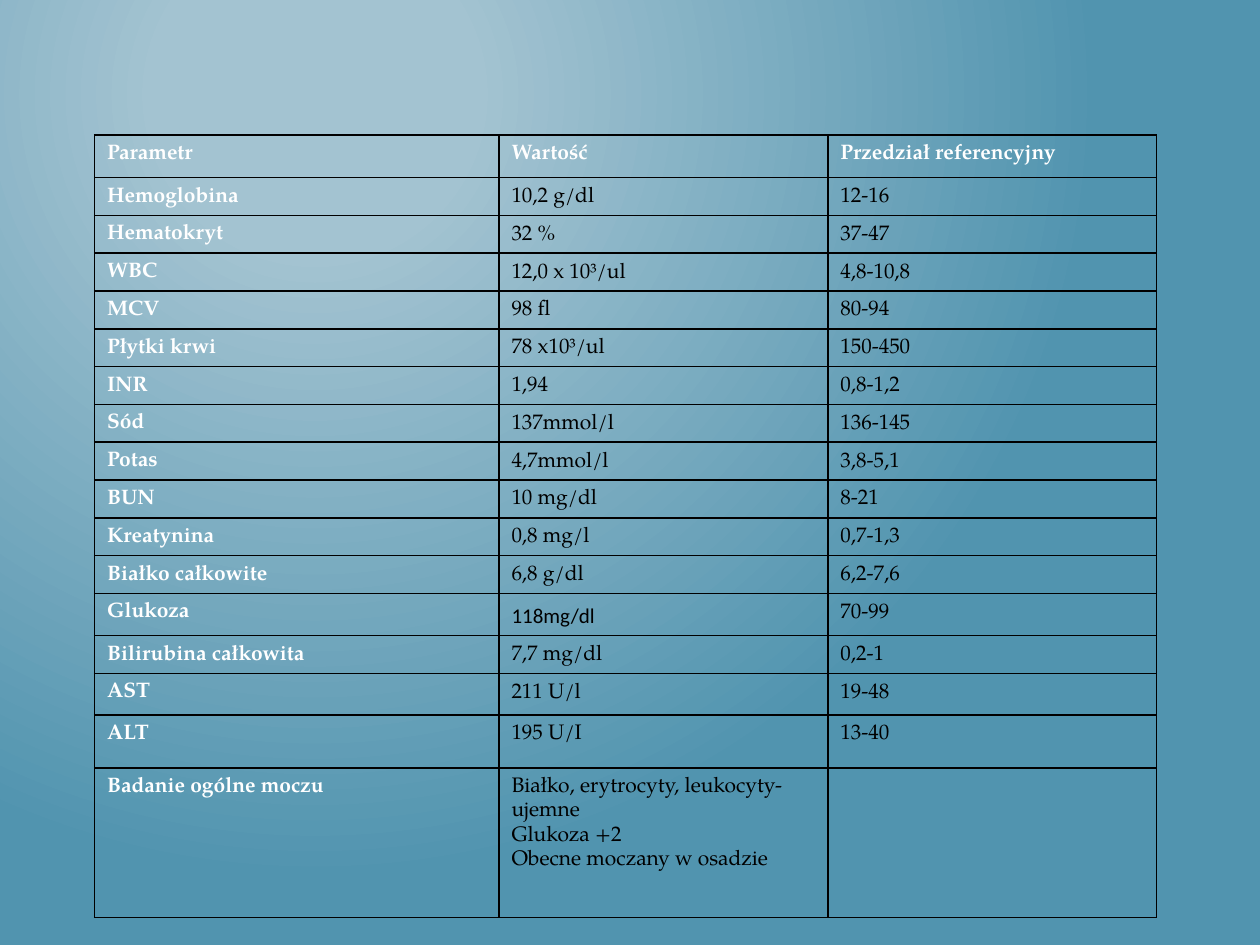
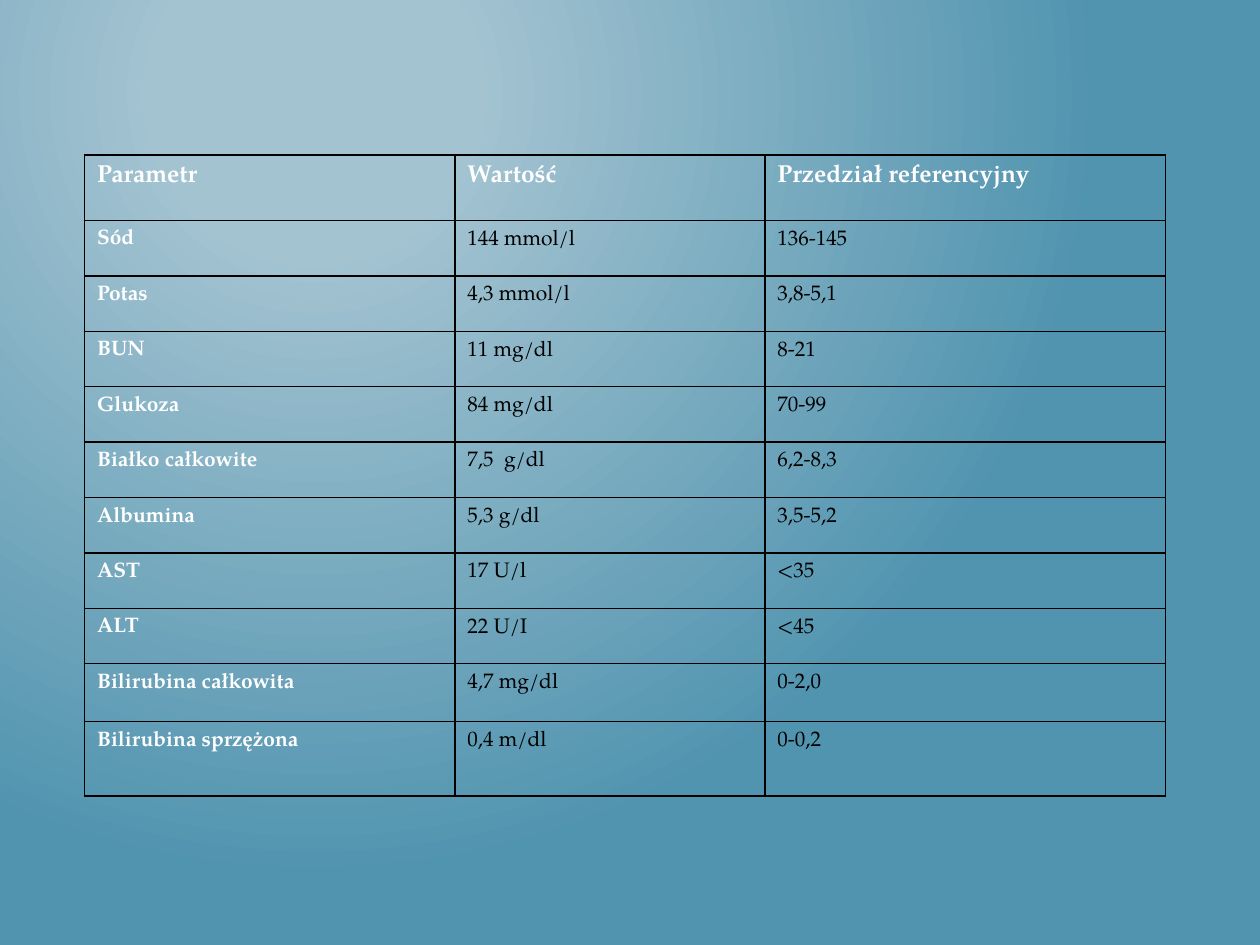
from lxml.etree import SubElement
from pptx import Presentation
from pptx.dml.color import RGBColor
from pptx.oxml.ns import qn
from pptx.util import Inches, Pt

WHITE, BLACK = "FFFFFF", "000000"
GLOW, SEA = "A3C3D1", "5194AF"
SERIF, SANS = "TeX Gyre Pagella", "Calibri"
HEADER = ("Parametr", "Wartość", "Przedział referencyjny")

ADMISSION_RESULTS = [
    ("Hemoglobina", "10,2 g/dl", "12-16"),
    ("Hematokryt", "32 %", "37-47"),
    ("WBC", "12,0 x 10³/ul", "4,8-10,8"),
    ("MCV", "98 fl", "80-94"),
    ("Płytki krwi", "78 x10³/ul", "150-450"),
    ("INR", "1,94", "0,8-1,2"),
    ("Sód", "137mmol/l", "136-145"),
    ("Potas", "4,7mmol/l", "3,8-5,1"),
    ("BUN", "10 mg/dl", "8-21"),
    ("Kreatynina", "0,8 mg/l", "0,7-1,3"),
    ("Białko całkowite", "6,8 g/dl", "6,2-7,6"),
    ("Glukoza", "118mg/dl", "70-99"),
    ("Bilirubina całkowita", "7,7 mg/dl", "0,2-1"),
    ("AST", "211 U/l", "19-48"),
    ("ALT", "195 U/I", "13-40"),
    ("Badanie ogólne moczu",
     "Białko, erytrocyty, leukocyty- ujemne\nGlukoza +2\nObecne moczany w osadzie", ""),
]

FOLLOW_UP_RESULTS = [
    ("Sód", "144 mmol/l", "136-145"),
    ("Potas", "4,3 mmol/l", "3,8-5,1"),
    ("BUN", "11 mg/dl", "8-21"),
    ("Glukoza", "84 mg/dl", "70-99"),
    ("Białko całkowite", "7,5  g/dl", "6,2-8,3"),
    ("Albumina", "5,3 g/dl", "3,5-5,2"),
    ("AST", "17 U/l", "<35"),
    ("ALT", "22 U/I", "<45"),
    ("Bilirubina całkowita", "4,7 mg/dl", "0-2,0"),
    ("Bilirubina sprzężona", "0,4 m/dl", "0-0,2"),
]


def color(value):
    return RGBColor.from_string(value)


def write(frame, text, size=12, font=SERIF, ink=BLACK, bold=False):
    for index, line in enumerate(text.split("\n")):
        para = frame.add_paragraph() if index else frame.paragraphs[0]
        para.line_spacing = 1.15
        span = para.add_run()
        span.text = line
        span.font.size = Pt(size)
        span.font.name = font
        span.font.bold = bold
        span.font.color.rgb = color(ink)


def outline(cell, ink=BLACK, width=1):
    properties = cell._tc.get_or_add_tcPr()
    for side in ("a:lnL", "a:lnR", "a:lnT", "a:lnB"):
        line = SubElement(properties, qn(side), w=str(Pt(width)))
        solid = SubElement(line, qn("a:solidFill"))
        SubElement(solid, qn("a:srgbClr"), val=ink)


class LabDeck:
    def __init__(self):
        self.deck = Presentation()
        self.deck.slide_width = Inches(10)
        self.deck.slide_height = Inches(7.5)
        self.page = None
        self.paint_background()

    def paint_background(self):
        master = self.deck.slide_master
        fill = master.background.fill
        fill.gradient()
        for stop, position, tone in zip(fill.gradient_stops, (0.2, 1), (GLOW, SEA)):
            stop.position = position
            stop.color.rgb = color(tone)
        gradient = master.element.find(".//" + qn("a:gradFill"))
        gradient.remove(gradient.find(qn("a:lin")))
        circle = SubElement(gradient, qn("a:path"), path="circle")
        SubElement(circle, qn("a:fillToRect"), l="50000", t="20000", r="100000", b="100000")

    def add_page(self):
        self.page = self.deck.slides.add_slide(self.deck.slide_layouts[6])

    def add_results(self, results, left, top, widths, heights, header_size=12, sans_values=()):
        rows = [HEADER, *results]
        table = self.page.shapes.add_table(
            len(rows), len(widths), Inches(left), Inches(top),
            Inches(sum(widths)), Inches(sum(heights))).table
        table.horz_banding = False
        for column, width in zip(table.columns, widths):
            column.width = Inches(width)
        for row_index, (row, texts, height) in enumerate(zip(table.rows, rows, heights)):
            row.height = Inches(height)
            for column_index, (cell, text) in enumerate(zip(row.cells, texts)):
                outline(cell)
                cell.fill.background()
                label = row_index == 0 or column_index == 0
                write(cell.text_frame, text,
                      size=12 if row_index else header_size,
                      font=SANS if text in sans_values else SERIF,
                      ink=WHITE if label else BLACK, bold=label)


def main():
    lab = LabDeck()
    lab.add_page()
    lab.add_results(ADMISSION_RESULTS, 0.75, 1.07, (3.21, 2.61, 2.61),
                    [0.34] + [0.3] * 13 + [0.33, 0.42, 1.19],
                    sans_values=("118mg/dl",))
    lab.add_page()
    lab.add_results(FOLLOW_UP_RESULTS, 0.67, 1.23, (2.94, 2.46, 3.18),
                    [0.52] + [0.44] * 8 + [0.46, 0.59], header_size=14)
    lab.deck.save("out.pptx")


if __name__ == "__main__":
    main()
